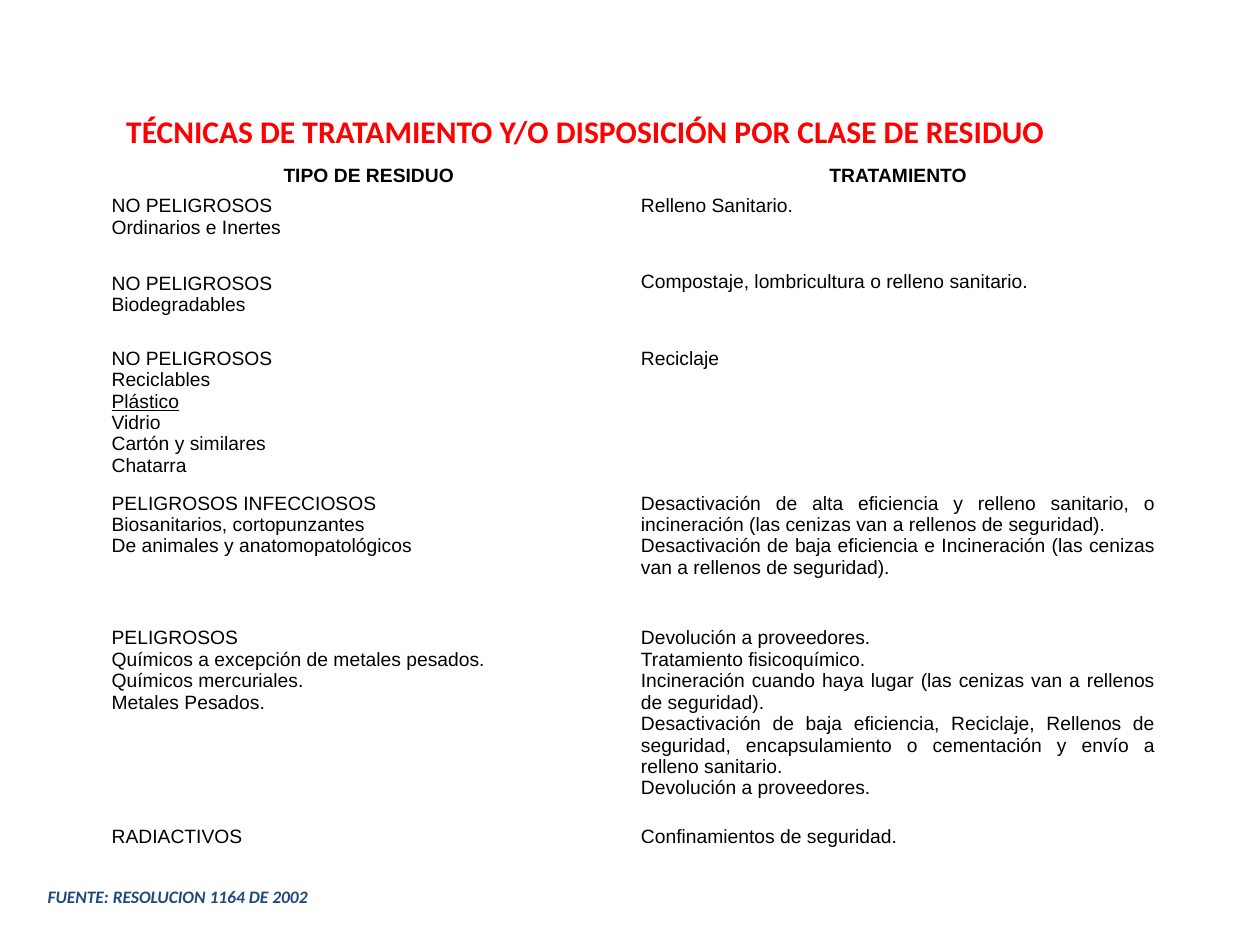
import dataclasses

import pptx
import pptx.dml.color
import pptx.enum.text
import pptx.util

Cm = pptx.util.Cm
Pt = pptx.util.Pt
RGB = pptx.dml.color.RGBColor
Align = pptx.enum.text.PP_ALIGN
Anchor = pptx.enum.text.MSO_ANCHOR


@dataclasses.dataclass(frozen=True)
class Theme:
    head: RGB = RGB(0xFF, 0, 0)
    ink: RGB = RGB(0, 0, 0)
    note: RGB = RGB(0x1F, 0x49, 0x7D)
    paper: RGB = RGB(0xFF, 0xFF, 0xFF)
    big: int = 18
    body: int = 11
    small: int = 10
    sans: str = "Calibri"
    grid: str = "Arial"


THEME = Theme()
TITLE = "TÉCNICAS DE TRATAMIENTO Y/O DISPOSICIÓN POR CLASE DE RESIDUO"
SOURCE = "FUENTE: RESOLUCION 1164 DE 2002"

# Row height in cm, waste type, treatment
ROWS = [
    (0.61, "TIPO DE RESIDUO", "TRATAMIENTO"),
    (1.52, "NO PELIGROSOS\nOrdinarios e Inertes", "Relleno Sanitario."),
    (1.55, "NO PELIGROSOS\nBiodegradables",
     "Compostaje, lombricultura o relleno sanitario."),
    (2.92, "NO PELIGROSOS\nReciclables\nPlástico\nVidrio\n"
     "Cartón y similares\nChatarra", "Reciclaje"),
    (2.72, "PELIGROSOS INFECCIOSOS\nBiosanitarios, cortopunzantes\n"
     "De animales y anatomopatológicos",
     "Desactivación de alta eficiencia y relleno sanitario, o incineración "
     "(las cenizas van a rellenos de seguridad).\n"
     "Desactivación de baja eficiencia e Incineración "
     "(las cenizas van a rellenos de seguridad)."),
    (4.01, "PELIGROSOS\nQuímicos a excepción de metales pesados.\n"
     "Químicos mercuriales.\nMetales Pesados.",
     "Devolución a proveedores.\nTratamiento fisicoquímico.\n"
     "Incineración cuando haya lugar (las cenizas van a rellenos de "
     "seguridad).\n"
     "Desactivación de baja eficiencia, Reciclaje, Rellenos de seguridad, "
     "encapsulamiento o cementación y envío a relleno sanitario.\n"
     "Devolución a proveedores."),
    (0.61, "RADIACTIVOS", "Confinamientos de seguridad."),
]


def style(frame, face, size, color, align, bold=False, slant=False):
    for para in frame.paragraphs:
        para.alignment = align
        for run in para.runs:
            font = run.font
            font.name, font.size = face, Pt(size)
            font.bold, font.italic = bold, slant
            font.color.rgb = color


def add_title(slide):
    shape = slide.shapes.title
    shape.left, shape.top = Cm(2.1), Cm(2.13)
    shape.width, shape.height = Cm(19.4), Cm(1.02)
    frame = shape.text_frame
    frame.text = TITLE
    frame.word_wrap = True
    frame.auto_size = pptx.enum.text.MSO_AUTO_SIZE.NONE
    frame.vertical_anchor = Anchor.TOP
    style(frame, THEME.sans, THEME.big, THEME.head, Align.CENTER, bold=True)


def fill_cell(cell, text, head):
    cell.fill.solid()
    cell.fill.fore_color.rgb = THEME.paper
    cell.margin_left = cell.margin_right = Cm(0.15)
    cell.margin_top = cell.margin_bottom = Cm(0.08)
    cell.text_frame.text = text
    align = Align.CENTER if head else Align.JUSTIFY
    style(cell.text_frame, THEME.grid, THEME.body, THEME.ink, align, bold=head)


def add_grid(slide):
    high = sum(row[0] for row in ROWS)
    table = slide.shapes.add_table(len(ROWS), 2, Cm(2.1), Cm(3.25),
                                   Cm(21.34), Cm(high)).table
    table.first_row = table.horz_banding = False
    for r, (tall, *texts) in enumerate(ROWS):
        table.rows[r].height = Cm(tall)
        for c, text in enumerate(texts):
            fill_cell(table.cell(r, c), text, head=r == 0)
    compost = table.cell(2, 0)
    compost.vertical_anchor = Anchor.MIDDLE
    compost.margin_bottom = Cm(0.53)
    plastic = table.cell(3, 0).text_frame.paragraphs[2]
    plastic.runs[0].font.underline = True


def add_source(slide):
    box = slide.shapes.add_textbox(Cm(0.71), Cm(17.73), Cm(12.7), Cm(0.69))
    frame = box.text_frame
    frame.word_wrap = True
    frame.text = SOURCE
    style(frame, THEME.sans, THEME.small, THEME.note, Align.LEFT,
          bold=True, slant=True)


def main():
    deck = pptx.Presentation()
    deck.slide_width, deck.slide_height = Cm(25.4), Cm(19.05)
    slide = deck.slides.add_slide(deck.slide_layouts[5])
    add_title(slide)
    add_grid(slide)
    add_source(slide)
    deck.save("out.pptx")


if __name__ == "__main__":
    main()
